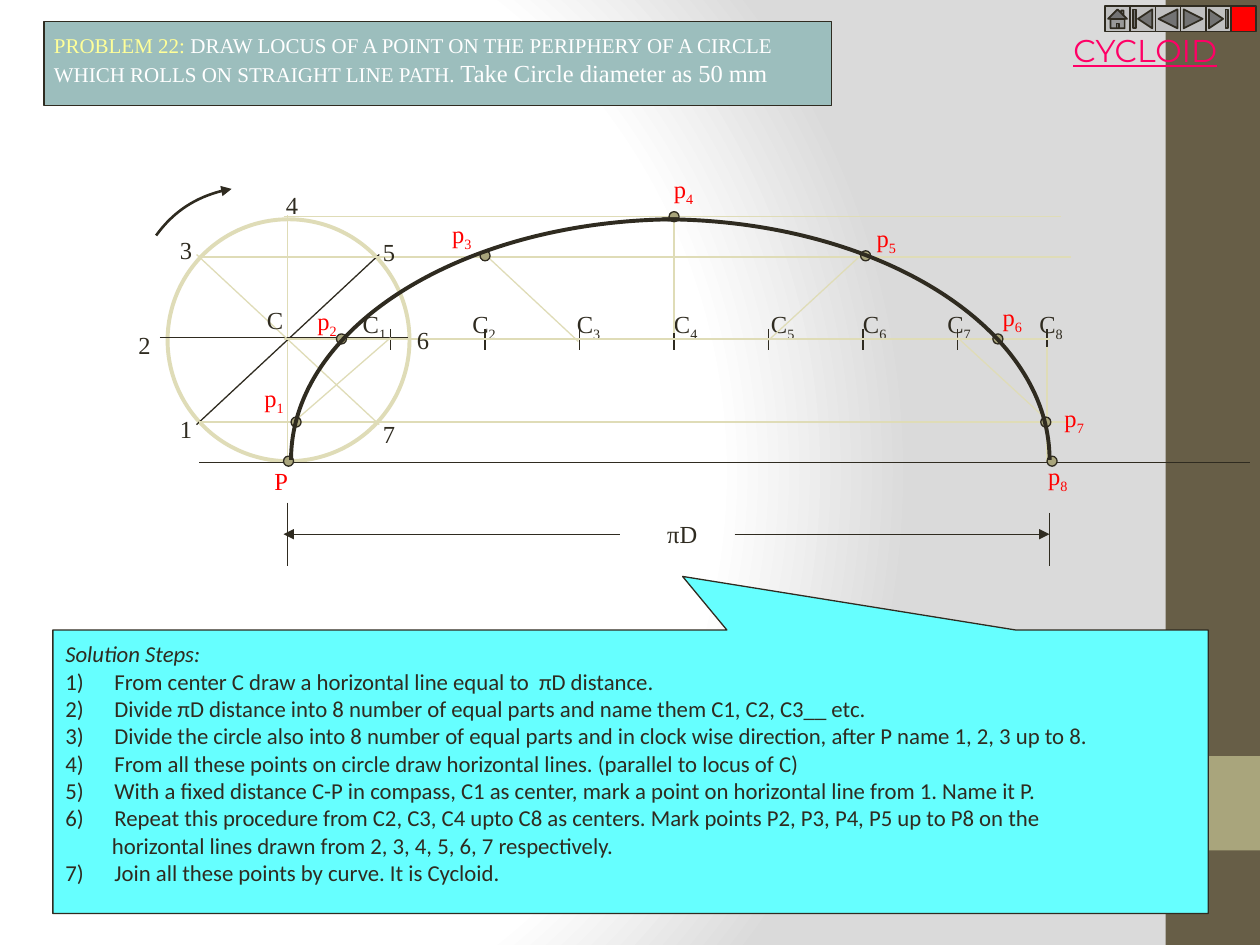
from lxml import etree
from pptx import Presentation
from pptx import oxml
from pptx import util as u
from pptx.dml.color import RGBColor
from pptx.enum import shapes, text
from pptx.oxml import ns

INK = RGBColor(0x2F, 0x2B, 0x20)
SAND = RGBColor(0xDF, 0xDC, 0xB7)
OLIVE = RGBColor(0xA9, 0xA5, 0x7C)
BROWN = RGBColor(0x67, 0x5E, 0x47)
TEAL = RGBColor(0x9C, 0xBE, 0xBD)
CYAN = RGBColor(0x66, 0xFF, 0xFF)
SILVER = RGBColor(0xC0, 0xC0, 0xC0)
RED = RGBColor(0xFF, 0x00, 0x00)
PINK = RGBColor(0xFF, 0x00, 0x66)
YELLOW = RGBColor(0xFF, 0xFF, 0x99)
WHITE = RGBColor(0xFF, 0xFF, 0xFF)

GRADIENT = f"""<a:gradFill {ns.nsdecls('a')} rotWithShape="1"><a:gsLst>
<a:gs pos="0"><a:srgbClr val="FFFFFF"/></a:gs>
<a:gs pos="75000"><a:srgbClr val="FFFFFF"/></a:gs>
<a:gs pos="100000"><a:srgbClr val="DADADA"/></a:gs></a:gsLst>
<a:path path="circle"><a:fillToRect l="20000" t="50000" r="100000" b="50000"/></a:path>
</a:gradFill>"""

SHAPE = shapes.MSO_SHAPE


def add_span(para, words, size=14, font="Times New Roman", color=INK,
             italic=False, underline=False, sub=False):
    """Add one run of text to a paragraph in the given format."""
    span = para.add_run()
    span.text = words
    span.font.size = u.Pt(size)
    span.font.name = font
    span.font.color.rgb = color
    if italic:
        span.font.italic = True
    if underline:
        span.font.underline = True
    if sub:
        span.font._element.set("baseline", "-25000")


class Drawing:
    """Holds the slide and its line style, and adds each kind of element."""

    def __init__(self, page, ink=INK, width=0.75):
        self.page, self.ink, self.width = page, ink, width

    def background(self):
        self.page.background.fill.solid()
        holder = self.page.element.find(".//" + ns.qn("p:bgPr"))
        holder.replace(holder[0], oxml.parse_xml(GRADIENT))

    def stroke(self, item, color=None, width=None, arrow=False):
        item.line.color.rgb = color or self.ink
        item.line.width = u.Pt(width or self.width)
        if arrow:
            etree.SubElement(item.line._get_or_add_ln(), ns.qn("a:tailEnd"), type="triangle")

    def shape(self, kind, left, top, width, height, fill, outline=True, color=None, weight=None):
        item = self.page.shapes.add_shape(kind, *map(u.Inches, (left, top, width, height)))
        item.shadow.inherit = False
        item.fill.solid()
        item.fill.fore_color.rgb = fill
        if outline:
            self.stroke(item, color, weight)
        else:
            item.line.fill.background()
        return item

    def line(self, x1, y1, x2, y2, color=None, arrow=False):
        item = self.page.shapes.add_connector(
            shapes.MSO_CONNECTOR.STRAIGHT, *map(u.Inches, (x1, y1, x2, y2)))
        self.stroke(item, color, arrow=arrow)
        etree.SubElement(item._element.spPr, ns.qn("a:effectLst"))

    def arc(self, start, bend, turn, end, corner, width=2.25, rotation=0, arrow=False):
        """Draw a cubic arc; its corner is the centre that completes the frame."""
        builder = self.page.shapes.build_freeform(*map(u.Inches, start))
        builder.add_line_segments([tuple(map(u.Inches, p)) for p in (end, corner)], close=False)
        item = builder.convert_to_shape()
        # Bend the first segment and drop the one to the corner
        track = item._element.find(".//" + ns.qn("a:path"))
        for segment in track[1:]:
            track.remove(segment)
        cubic = etree.SubElement(track, ns.qn("a:cubicBezTo"))
        for x, y in (bend, turn, end):
            etree.SubElement(cubic, ns.qn("a:pt"), x=str(u.Inches(x) - item.left),
                             y=str(u.Inches(y) - item.top))
        item.rotation = rotation
        item.shadow.inherit = False
        item.fill.background()
        self.stroke(item, width=width, arrow=arrow)

    def text(self, left, top, width, height, paras, wrap=False, align=None, **style):
        """Each paragraph is a list of (words, style changes)."""
        box = self.page.shapes.add_textbox(*map(u.Inches, (left, top, width, height)))
        frame = box.text_frame
        frame.word_wrap = wrap
        frame.auto_size = text.MSO_AUTO_SIZE.SHAPE_TO_FIT_TEXT
        for index, spans in enumerate(paras):
            para = frame.add_paragraph() if index else frame.paragraphs[0]
            if align is not None:
                para.alignment = align
            for words, changes in spans:
                add_span(para, words, **{**style, **changes})
        return frame

    def label(self, left, top, letter, index="", width=0.36, color=RED):
        spans = [(letter, {})] + ([(str(index), {"sub": True})] if index else [])
        self.text(left, top, width, 0.33, [spans], color=color)


def draw_construction(draw):
    # Rolling circle with its base line and diameters
    draw.shape(SHAPE.OVAL, 1.33, 1.74, 1.92, 1.92, WHITE, color=SAND, weight=2.25)
    draw.line(1.58, 3.67, 9.92, 3.67)
    draw.line(2.28, 1.71, 2.28, 3.68, SAND)
    draw.line(1.27, 2.68, 3.24, 2.68)
    draw.line(1.56, 2.02, 3.01, 3.37, SAND)
    draw.line(3.01, 2.02, 1.56, 3.37)
    draw.label(2.08, 3.65, "P", width=0.31)

    # Centre positions C1 to C8
    for x in [3.1 + 0.75 * i for i in range(7)] + [8.31]:
        draw.line(x, 2.61, x, 2.78)
    spans = []
    for index in range(1, 9):
        spans += [("\tC" if index > 1 else "C", {}), (str(index), {"sub": True})]
    frame = draw.text(2.78, 2.4, 5.79, 0.33, [spans], wrap=True)
    tabs = etree.SubElement(frame.paragraphs[0]._p.get_or_add_pPr(), ns.qn("a:tabLst"))
    for stop in (0.87, 1.7, 2.47, 3.24, 3.97, 4.64, 5.37):
        etree.SubElement(tabs, ns.qn("a:tab"), pos=str(u.Inches(stop)), algn="l")

    # Horizontals through the circle's points, then radii from the centres
    for x1, y, x2 in ((2.25, 2.69, 8.33), (1.58, 3.35, 8.5), (1.58, 2.04, 8.5), (2.25, 1.72, 8.42)):
        draw.line(x1, y, x2, y, SAND)
    for ends in ((3.1, 2.68, 2.33, 3.35), (4.59, 2.71, 3.85, 2.02), (6.1, 2.7, 6.85, 2.01),
                 (7.6, 2.68, 8.35, 3.37), (5.35, 1.72, 5.35, 2.64), (8.31, 2.75, 8.31, 3.67)):
        draw.line(*ends, SAND)


def draw_locus(draw):
    # Locus points and their names
    places = ((2, 2.99), (2.42, 2.38), (3.49, 1.69), (5.25, 1.33),
              (6.86, 1.72), (7.86, 2.35), (8.35, 3.15), (8.22, 3.61))
    for index, (x, y) in enumerate(places, 1):
        draw.label(x, y, "p", index)
    for x, y in ((2.25, 3.62), (2.31, 3.31), (2.67, 2.65), (3.81, 1.99), (5.31, 1.68),
                 (6.83, 1.99), (7.88, 2.65), (8.26, 3.31), (8.31, 3.62)):
        draw.shape(SHAPE.OVAL, x, y, 0.08, 0.08, OLIVE)

    # Circle divisions and centre
    divisions = ((1.33, 3.24), (1, 2.57), (1.33, 1.82), (2.17, 1.46),
                 (2.94, 1.83), (3.21, 2.53), (2.94, 3.28))
    for index, (x, y) in enumerate(divisions, 1):
        draw.label(x, y, str(index), width=0.3, color=INK)
    draw.label(2.02, 2.37, "C", width=0.33, color=INK)

    # Rolling direction and the two halves of the cycloid
    draw.arc((1.78, 1.68), (1.95, 1.85), (2.05, 2.09), (2.05, 2.33), (1.13, 2.33),
             width=1.5, rotation=260.9, arrow=True)
    draw.arc((5.39, 1.74), (3.69, 1.74), (2.31, 2.59), (2.31, 3.65), (5.39, 3.65))
    draw.arc((5.25, 1.74), (6.95, 1.74), (8.33, 2.59), (8.33, 3.65), (5.25, 3.65))

    # Dimension πD
    draw.line(2.28, 3.99, 2.28, 4.49)
    draw.line(8.33, 4.07, 8.33, 4.49)
    draw.line(4.92, 4.24, 2.25, 4.24, arrow=True)
    draw.line(5.83, 4.24, 8.33, 4.24, arrow=True)
    draw.text(5, 4.07, 0.83, 0.33, [[("πD", {})]], wrap=True, align=text.PP_ALIGN.CENTER)


def draw_words(draw):
    # Heading and problem statement
    draw.text(8.42, 0.2, 1.45, 0.4, [[("CYCLOID", {})]],
              size=18, font="Montserrat", color=PINK, underline=True)
    draw.shape(SHAPE.RECTANGLE, 0.35, 0.17, 6.25, 0.67, TEAL)
    draw.text(0.33, 0.21, 6.37, 0.53, [
        [("PROBLEM 22: ", {"color": YELLOW}),
         ("DRAW LOCUS OF A POINT ON THE PERIPHERY OF A CIRCLE", {})],
        [("WHICH ROLLS ON STRAIGHT LINE PATH. ", {}),
         ("Take Circle diameter as 50 mm", {"size": 14})]], size=12, color=WHITE)

    # Solution steps with hanging numbers
    callout = draw.shape(SHAPE.RECTANGULAR_CALLOUT, 0.42, 5, 9.17, 2.25, CYAN)
    callout.adjustments[0], callout.adjustments[1] = 0.045, -0.689
    steps = (
        "1)\tFrom center C draw a horizontal line equal to  πD distance.",
        "2)\tDivide πD distance into 8 number of equal parts and name them C1, C2, C3__ etc.",
        "3)\tDivide the circle also into 8 number of equal parts and in clock wise direction, "
        "after P name 1, 2, 3 up to 8.",
        "4)\tFrom all these points on circle draw horizontal lines. (parallel to locus of C)",
        "5)\tWith a fixed distance C-P in compass, C1 as center, mark a point on horizontal line "
        "from 1. Name it P.",
        "6)\tRepeat this procedure from C2, C3, C4 upto C8 as centers. Mark points P2, P3, P4, P5 "
        "up to P8 on the",
        "horizontal lines drawn from 2, 3, 4, 5, 6, 7 respectively.",
        "7)\tJoin all these points by curve. It is Cycloid.")
    paras = [[("Solution Steps:", {"italic": True})]] + [[(step, {})] for step in steps]
    frame = draw.text(0.42, 5.03, 9.25, 2.05, paras, wrap=True, size=13, font="Calibri")
    for para in frame.paragraphs[1:]:
        numbered = "\t" in para.text
        layout = para._p.get_or_add_pPr()
        layout.set("marL", str(u.Inches(0.39 if numbered else 0.37)))
        layout.set("indent", str(u.Inches(-0.39 if numbered else 0)))


def main():
    deck = Presentation()
    deck.slide_width, deck.slide_height = u.Inches(10), u.Inches(7.5)
    draw = Drawing(deck.slides.add_slide(deck.slide_layouts[6]))

    # Backdrop and side band
    draw.background()
    draw.shape(SHAPE.RECTANGLE, 9.25, 0, 0.75, 7.5, BROWN, outline=False)
    draw.shape(SHAPE.RECTANGLE, 9.25, 6, 0.75, 0.75, OLIVE, outline=False)

    draw_construction(draw)
    draw_locus(draw)
    draw_words(draw)

    # Navigation buttons
    buttons = (SHAPE.ACTION_BUTTON_HOME, SHAPE.ACTION_BUTTON_BEGINNING,
               SHAPE.ACTION_BUTTON_BACK_OR_PREVIOUS, SHAPE.ACTION_BUTTON_FORWARD_OR_NEXT,
               SHAPE.ACTION_BUTTON_END, SHAPE.ACTION_BUTTON_CUSTOM)
    for index, kind in enumerate(buttons):
        fill = RED if kind == SHAPE.ACTION_BUTTON_CUSTOM else SILVER
        draw.shape(kind, 8.77 + 0.2 * index, 0.05, 0.2, 0.2, fill, weight=1)
    deck.save("out.pptx")


if __name__ == "__main__":
    main()
